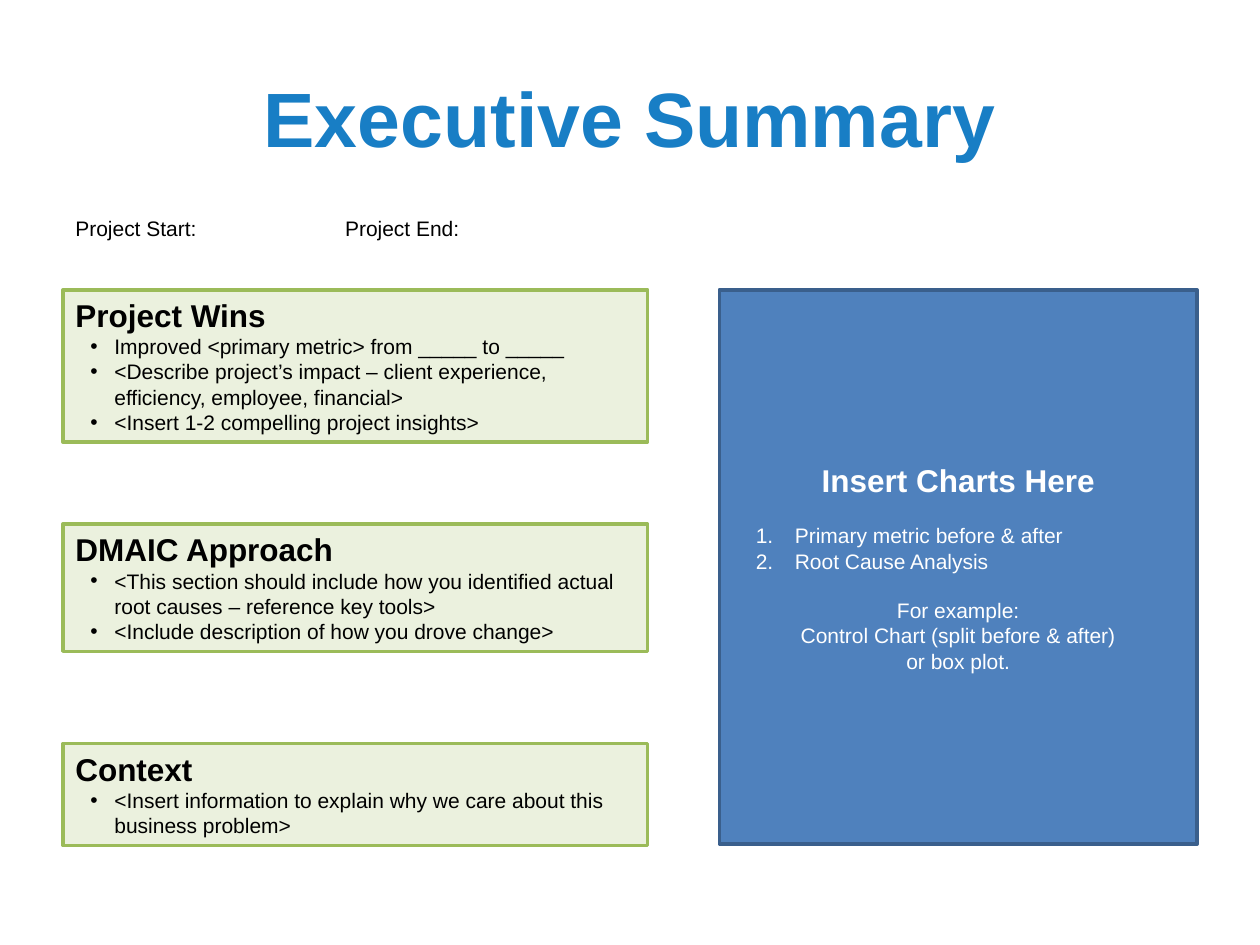
"""Build the executive summary slide of a process improvement project."""
import dataclasses
import typing

import lxml.etree
import pptx
import pptx.dml.color
import pptx.enum.shapes
import pptx.enum.text
import pptx.oxml.ns
import pptx.util

EMU_PER_PX = 9144
ALIGN = pptx.enum.text.PP_ALIGN
ANCHOR = pptx.enum.text.MSO_ANCHOR
FIT = pptx.enum.text.MSO_AUTO_SIZE


@dataclasses.dataclass(frozen=True)
class Theme:
    font: str = "Arial"
    title: str = "187EC5"
    ink: str = "000000"
    light: str = "FFFFFF"
    card_fill: str = "EBF1DE"
    card_line: str = "9BBB59"
    panel_fill: str = "4F81BD"
    panel_line: str = "3A5F8C"
    title_size: int = 44
    heading_size: int = 18
    body_size: int = 12
    line_width: int = 2
    line_gap: int = 14


THEME = Theme()


class Area(typing.NamedTuple):
    left: int
    top: int
    width: int
    height: int


@dataclasses.dataclass(frozen=True)
class Style:
    size: int
    color: str
    bold: bool = False
    align: ALIGN = ALIGN.LEFT
    space_before: int = 0


@dataclasses.dataclass(frozen=True)
class Marker:
    tag: str
    attribute: str
    value: str
    margin: int
    hanging: int


@dataclasses.dataclass(frozen=True)
class Card:
    top: int
    height: int
    heading: str
    points: tuple[str, ...]


BULLET = Marker("a:buChar", "char", "•", 31, 19)
NUMBER = Marker("a:buAutoNum", "type", "arabicPeriod", 50, 31)

CARDS = (
    Card(230, 121, "Project Wins", (
        "Improved <primary metric> from _____ to _____",
        "<Describe project’s impact – client experience, efficiency, employee, financial>",
        "<Insert 1-2 compelling project insights>",
    )),
    Card(416, 101, "DMAIC Approach", (
        "<This section should include how you identified actual root causes – reference key tools>",
        "<Include description of how you drove change>",
    )),
    Card(590, 81, "Context", (
        "<Insert information to explain why we care about this\nbusiness problem>",
    )),
)
DATES = (
    ("Project Start:", Area(50, 166, 117, 30)),
    ("Project End:", Area(264, 166, 112, 30)),
)


def px(length: int) -> pptx.util.Emu:
    """Turn slide pixels into EMU."""
    return pptx.util.Emu(length * EMU_PER_PX)


def rgb(color: str) -> pptx.dml.color.RGBColor:
    """Turn a hex string into a colour."""
    return pptx.dml.color.RGBColor.from_string(color)


def write(para, text: str, style: Style) -> None:
    """Fill a paragraph, one run for each line of text."""
    para.alignment = style.align
    para.space_before = pptx.util.Pt(style.space_before)
    for index, line in enumerate(text.split("\n")):
        if index:
            para.add_line_break()
        span = para.add_run()
        span.text = line
        span.font.name = THEME.font
        span.font.size = pptx.util.Pt(style.size)
        span.font.bold = style.bold
        span.font.color.rgb = rgb(style.color)


def mark(para, marker: Marker) -> None:
    """Give a paragraph a hanging bullet or number."""
    properties = para._p.get_or_add_pPr()
    properties.set("marL", str(px(marker.margin)))
    properties.set("indent", str(px(-marker.hanging)))
    qualify = pptx.oxml.ns.qn
    lxml.etree.SubElement(properties, qualify("a:buFont"), typeface=THEME.font)
    bullet = lxml.etree.SubElement(properties, qualify(marker.tag))
    bullet.set(marker.attribute, marker.value)


def add_list(frame, items: tuple[str, ...], marker: Marker, color: str, gap: int = 0) -> None:
    """Append marked paragraphs, with a gap before the first."""
    for index, item in enumerate(items):
        para = frame.add_paragraph()
        space = 0 if index else gap
        write(para, item, Style(THEME.body_size, color, space_before=space))
        mark(para, marker)


def add_box(page, area: Area, fill: str, line: str, anchor: ANCHOR):
    """Draw an outlined rectangle and return its text frame."""
    box = page.shapes.add_shape(
        pptx.enum.shapes.MSO_SHAPE.RECTANGLE, *map(px, area))
    box.shadow.inherit = False
    box.fill.solid()
    box.fill.fore_color.rgb = rgb(fill)
    box.line.color.rgb = rgb(line)
    box.line.width = pptx.util.Pt(THEME.line_width)
    box.text_frame.word_wrap = True
    box.text_frame.vertical_anchor = anchor
    return box.text_frame


def add_title(page, text: str, area: Area) -> None:
    """Place and fill the title placeholder."""
    title = page.shapes.title
    title.left, title.top, title.width, title.height = map(px, area)
    title.text_frame.vertical_anchor = ANCHOR.MIDDLE
    write(title.text_frame.paragraphs[0], text,
          Style(THEME.title_size, THEME.title, True, ALIGN.CENTER))


def add_label(page, text: str, area: Area) -> None:
    """Add an unwrapped one-line label."""
    frame = page.shapes.add_textbox(*map(px, area)).text_frame
    frame.word_wrap = False
    frame.auto_size = FIT.SHAPE_TO_FIT_TEXT
    write(frame.paragraphs[0], text, Style(THEME.body_size, THEME.ink))


def add_card(page, card: Card) -> None:
    """Add a summary card with a heading and bullets."""
    area = Area(50, card.top, 464, card.height)
    frame = add_box(page, area, THEME.card_fill, THEME.card_line, ANCHOR.TOP)
    frame.auto_size = FIT.SHAPE_TO_FIT_TEXT
    write(frame.paragraphs[0], card.heading, Style(THEME.heading_size, THEME.ink, True))
    add_list(frame, card.points, BULLET, THEME.ink)


def add_chart_panel(page, area: Area) -> None:
    """Add the panel that reserves room for charts."""
    frame = add_box(page, area, THEME.panel_fill, THEME.panel_line, ANCHOR.MIDDLE)
    write(frame.paragraphs[0], "Insert Charts Here",
          Style(THEME.heading_size, THEME.light, True, ALIGN.CENTER))
    add_list(frame, ("Primary metric before & after", "Root Cause Analysis"),
             NUMBER, THEME.light, THEME.line_gap)
    write(frame.add_paragraph(),
          "For example:\nControl Chart (split before & after)\nor box plot.",
          Style(THEME.body_size, THEME.light, align=ALIGN.CENTER,
                space_before=THEME.line_gap))


def main() -> None:
    """Build and save the deck."""
    deck = pptx.Presentation()
    deck.slide_width, deck.slide_height = px(1000), px(750)
    page = deck.slides.add_slide(deck.slide_layouts.get_by_name("Title Only"))
    add_title(page, "Executive Summary", Area(50, 30, 900, 125))
    for card in CARDS:
        add_card(page, card)
    for text, area in DATES:
        add_label(page, text, area)
    add_chart_panel(page, Area(571, 230, 379, 440))
    deck.save("out.pptx")


if __name__ == "__main__":
    main()
